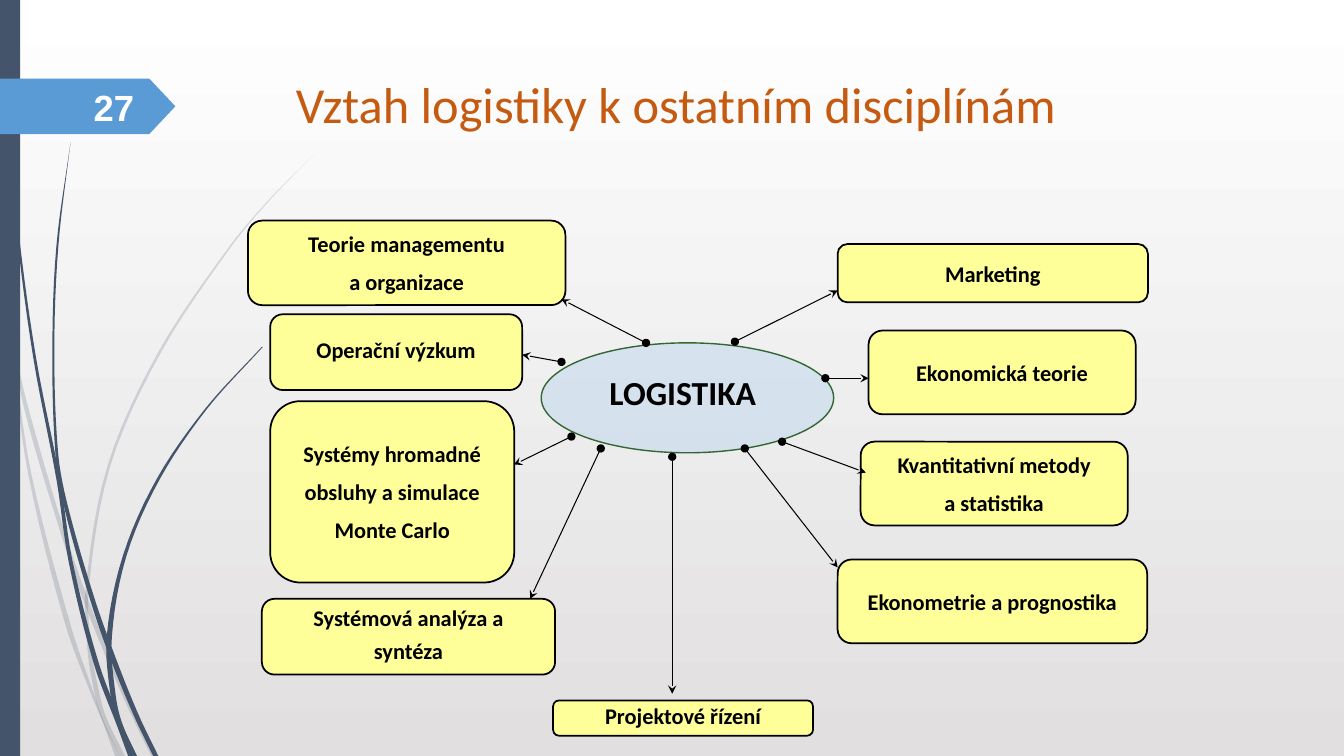
from lxml.etree import SubElement
from pptx import Presentation
from pptx.dml.color import RGBColor
from pptx.enum.shapes import MSO_CONNECTOR as Connector, MSO_SHAPE as Preset
from pptx.enum.text import MSO_ANCHOR as Anchor, PP_ALIGN as Align
from pptx.oxml.ns import qn
from pptx.util import Cm, Pt

COLORS = {
    "white": "FFFFFF", "haze": "E1DFDF", "slate": "44546A", "tag": "5B9BD5",
    "title": "C55A11", "black": "000000", "box": "FFFF99",
    "hub": "BDD7EE", "hub_line": "336633",
}
BLANK_LAYOUT = 6
WIDTH, HEIGHT = 33.87, 19.05
STEPS = 6

# Each strand is a list of (y, left edge, right edge) in cm.
PALE_STRANDS = [
    [(7.16, 0, 0), (7.59, 0, 0.1), (8.89, 0.28, 0.33), (11.94, 0.71, 0.79),
     (15.75, 1.65, 1.78), (17.6, 2.34, 2.41), (18.14, 2.57, 2.6), (19.05, 2.9, 3.02)],
    [(8.76, 0.36, 0.36), (10.26, 0.6, 0.71), (13.21, 1.46, 1.57),
     (15.21, 2.13, 2.26), (17.6, 3.12, 3.24), (19.05, 3.81, 3.94)],
    [(3.89, 7.92, 7.92), (5, 6.81, 6.84), (6.2, 5.79, 5.84), (8.84, 4.01, 4.08),
     (11.71, 2.72, 2.79), (14.83, 2.16, 2.24), (16.41, 2.21, 2.31),
     (17.35, 2.36, 2.48), (18.06, 2.54, 2.67), (19.05, 3.02, 3.15)],
]
DARK_STRANDS = [
    [(0, 0.08, 0.1), (2.79, 0.18, 0.2), (5.92, 0.43, 0.48), (9.02, 0.84, 0.91),
     (12.12, 1.43, 1.52), (14.15, 1.73, 1.83), (16.71, 2.36, 2.49),
     (18.34, 2.97, 3.12), (19.05, 3.23, 3.45)],
    [(3.58, 1.78, 1.78), (6.22, 1.42, 1.47), (8.86, 1.32, 1.37), (11.46, 1.4, 1.47),
     (12.83, 1.63, 1.73), (15.01, 2.24, 2.36), (16.43, 2.72, 2.86),
     (17.96, 3.34, 3.47), (19.05, 3.86, 3.99)],
    [(8.74, 6.6, 6.63), (10.29, 5.18, 5.23), (12.07, 3.95, 4.03), (14, 3.1, 3.19),
     (16.05, 2.69, 2.82), (17.55, 2.79, 2.92), (18.29, 2.97, 3.1), (19.05, 3.3, 3.45)],
]
# Lines of text, left, top, width, height, line spacing.
DISCIPLINES = [
    (["Teorie managementu", "a organizace"], 6.25, 5.56, 8, 2.13, None),
    (["Operační výzkum"], 6.81, 7.92, 6.35, 1.91, 0.8),
    (["Systémy hromadné", "obsluhy a simulace", "Monte Carlo"], 6.81, 10.11, 6.15, 4.57, None),
    (["Systémová analýza a", "syntéza"], 6.6, 15.09, 7.39, 1.91, 0.8),
    (["Projektové řízení"], 13.94, 17.65, 6.55, 0.89, 0.8),
    (["Marketing"], 21.11, 6.15, 7.82, 1.47, None),
    (["Ekonomická teorie"], 21.89, 8.33, 6.73, 2.11, None),
    (["Kvantitativní metody", "a statistika"], 21.69, 11.13, 6.73, 2.11, None),
    (["Ekonometrie a prognostika"], 21.11, 14.1, 7.8, 2.11, None),
]
ARROWS = [
    (16.94, 11.51, 16.94, 17.48), (16.28, 8.64, 14.15, 7.54),
    (14.15, 9.12, 13.16, 8.94), (14.4, 11, 12.95, 11.71),
    (15.14, 11.3, 13.36, 15.09), (18.52, 8.61, 21.11, 7.32),
    (20.8, 9.53, 21.89, 9.53), (19.71, 11.13, 21.82, 11.91),
    (18.77, 11.3, 21.11, 14.3),
]


def color(name):
    return RGBColor.from_string(COLORS[name])


def paint(shape, fill, line=None, line_width=1.0, opacity=100):
    shape.shadow.inherit = False
    shape.fill.solid()
    shape.fill.fore_color.rgb = color(fill)
    if opacity < 100:
        fill_color = shape._element.spPr.find(qn("a:solidFill"))[0]
        SubElement(fill_color, qn("a:alpha"), val=str(opacity * 1000))
    if line:
        shape.line.color.rgb = color(line)
        shape.line.width = Pt(line_width)
    else:
        shape.line.fill.background()


def add_preset(slide, preset, left, top, width, height, **look):
    shape = slide.shapes.add_shape(preset, Cm(left), Cm(top), Cm(width), Cm(height))
    paint(shape, **look)
    return shape


def write(shape, *lines, size, ink="black", font="Calibri", bold=False,
          align=Align.LEFT, anchor=Anchor.TOP, spacing=None, wrap=True):
    frame = shape.text_frame
    frame.word_wrap = wrap
    frame.vertical_anchor = anchor
    for index, line in enumerate(lines):
        paragraph = frame.add_paragraph() if index else frame.paragraphs[0]
        paragraph.alignment = align
        if index:
            paragraph.space_before = Pt(size / 2)
        if spacing:
            paragraph.line_spacing = spacing
        run = paragraph.add_run()
        run.text = line
        run.font.name = font
        run.font.size = Pt(size)
        run.font.bold = bold
        run.font.color.rgb = color(ink)


def add_text(slide, text, left, top, width, height, **text_format):
    box = slide.shapes.add_textbox(Cm(left), Cm(top), Cm(width), Cm(height))
    write(box, text, **text_format)


def smooth_edge(points):
    """Run a cubic curve through (y, x) points and return (x, y) vertices."""
    last = len(points) - 1
    slopes = []
    for index in range(last + 1):
        (y0, x0), (y1, x1) = points[max(index - 1, 0)], points[min(index + 1, last)]
        slopes.append((x1 - x0) / (y1 - y0))
    vertices = []
    for index in range(last):
        (y0, x0), (y1, x1) = points[index:index + 2]
        gap = y1 - y0
        for step in range(STEPS):
            t = step / STEPS
            x = ((1 + 2 * t) * (1 - t) ** 2 * x0 + t * (1 - t) ** 2 * gap * slopes[index]
                 + t * t * (3 - 2 * t) * x1 + t * t * (t - 1) * gap * slopes[index + 1])
            vertices.append((Cm(x), Cm(y0 + t * gap)))
    y, x = points[-1]
    return vertices + [(Cm(x), Cm(y))]


def add_strand(slide, rows, opacity):
    left = smooth_edge([(y, x) for y, x, _ in rows])
    right = smooth_edge([(y, x) for y, _, x in rows])
    builder = slide.shapes.build_freeform(*left[0])
    builder.add_line_segments(left[1:] + right[::-1], close=True)
    paint(builder.convert_to_shape(), "slate", opacity=opacity)


def add_arrow(slide, *ends):
    arrow = slide.shapes.add_connector(Connector.STRAIGHT, *map(Cm, ends))
    arrow.line.color.rgb = color("black")
    arrow.line.width = Pt(0.75)
    line = arrow.line._get_or_add_ln()
    SubElement(line, qn("a:headEnd"), type="oval")
    SubElement(line, qn("a:tailEnd"), type="stealth")
    SubElement(arrow._element.spPr, qn("a:effectLst"))


def set_background(slide):
    fill = slide.background.fill
    fill.gradient()
    fill.gradient_angle = 270
    for stop, name in zip(fill.gradient_stops, ("white", "haze")):
        stop.color.rgb = color(name)


def main():
    presentation = Presentation()
    presentation.slide_width, presentation.slide_height = Cm(WIDTH), Cm(HEIGHT)
    slide = presentation.slides.add_slide(presentation.slide_layouts[BLANK_LAYOUT])
    set_background(slide)
    for strands, opacity in ((PALE_STRANDS, 20), (DARK_STRANDS, 100)):
        for rows in strands:
            add_strand(slide, rows, opacity)
    add_preset(slide, Preset.RECTANGLE, 0, 0, 0.51, HEIGHT, fill="slate")
    tag = add_preset(slide, Preset.PENTAGON, 0, 1.98, 4.42, 1.4, fill="tag")
    tag.adjustments[0] = 0.47
    add_text(slide, "27", 1.47, 2.18, 2.16, 1.02, size=26, ink="white", font="Arial",
             bold=True, align=Align.RIGHT, anchor=Anchor.MIDDLE)
    add_text(slide, "Vztah logistiky k ostatním disciplínám", 7.21, 1.73, 24.77, 3.56,
             size=36, ink="title")
    add_preset(slide, Preset.OVAL, 13.64, 8.64, 7.37, 2.77,
               fill="hub", line="hub_line", opacity=50)
    add_text(slide, "LOGISTIKA", 15.11, 9.25, 6.86, 3.58, size=24, bold=True)
    for lines, left, top, width, height, spacing in DISCIPLINES:
        box = add_preset(slide, Preset.ROUNDED_RECTANGLE, left, top, width, height,
                         fill="box", line="black", line_width=1.25)
        write(box, *lines, size=16, bold=True, align=Align.CENTER,
              anchor=Anchor.MIDDLE, spacing=spacing, wrap=False)
    for ends in ARROWS:
        add_arrow(slide, *ends)
    presentation.save("out.pptx")


if __name__ == "__main__":
    main()
